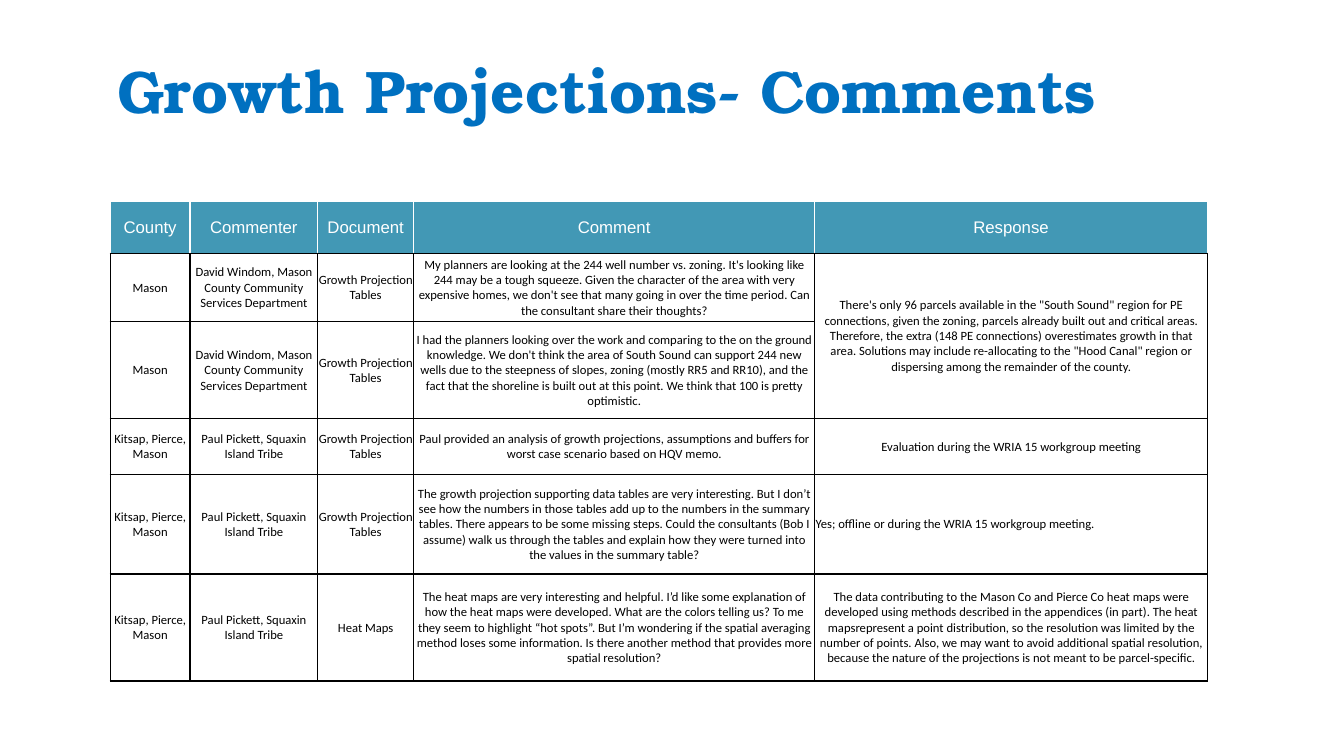
from typing import Any, NamedTuple

from pptx import Presentation
from pptx.dml.color import RGBColor
from pptx.enum.text import MSO_ANCHOR as Anchor, MSO_AUTO_SIZE as Fit, PP_ALIGN as Align
from pptx.oxml import parse_xml
from pptx.oxml.ns import nsdecls
from pptx.util import Pt

BLUE = RGBColor(0x00, 0x70, 0xC0)
TEAL = RGBColor(0x42, 0x98, 0xB5)
WHITE = RGBColor(0xFF, 0xFF, 0xFF)
BLACK = RGBColor(0x00, 0x00, 0x00)

WIDTHS = (56.9, 91.3, 68.5, 286.5, 280.6)
HEAD_HIGH = 36.7

TITLE_FONT = {"name": "TeX Gyre Bonum", "size": Pt(42.9), "bold": True}
HEAD_FONT = {"name": "Arial", "size": Pt(12), "bold": False}
BODY_FONT = {"name": "Calibri", "size": Pt(9), "bold": False}
CELL = {
    "margin_left": Pt(0.7),
    "margin_right": Pt(0.7),
    "margin_top": Pt(0.7),
    "margin_bottom": Pt(0),
    "vertical_anchor": Anchor.MIDDLE,
}


class Note(NamedTuple):
    high: float
    county: str
    person: str
    paper: str
    comment: str
    reply: str
    align: Align = Align.CENTER


HEADS = ("County", "Commenter", "Document", "Comment", "Response")
DAVID = "David Windom, Mason County Community Services Department"
PAUL = "Paul Pickett, Squaxin Island Tribe"
THREE = "Kitsap, Pierce, Mason"
TABLES = "Growth Projection Tables"

# An empty reply shares the cell above it.
NOTES = (
    Note(
        49, "Mason", DAVID, TABLES,
        "My planners are looking at the 244 well number vs. zoning. It's looking like "
        "244 may be a tough squeeze. Given the character of the area with very "
        "expensive homes, we don't see that many going in over the time period. Can "
        "the consultant share their thoughts?",
        "There's only 96 parcels available in the \"South Sound\" region for PE "
        "connections, given the zoning, parcels already built out and critical areas. "
        "Therefore, the extra (148 PE connections) overestimates growth in that area. "
        "Solutions may include re-allocating to the \"Hood Canal\" region or dispersing "
        "among the remainder of the county.",
    ),
    Note(
        69, "Mason", DAVID, TABLES,
        "I had the planners looking over the work and comparing to the on the ground "
        "knowledge. We don't think the area of South Sound can support 244 new "
        "wells due to the steepness of slopes, zoning (mostly RR5 and RR10), and the "
        "fact that the shoreline is built out at this point. We think that 100 is pretty "
        "optimistic.",
        "",
    ),
    Note(
        39.8, THREE, PAUL, TABLES,
        "Paul provided an analysis of growth projections, assumptions and buffers for "
        "worst case scenario based on HQV memo.",
        "Evaluation during the WRIA 15 workgroup meeting",
    ),
    Note(
        71.4, THREE, PAUL, TABLES,
        "The growth projection supporting data tables are very interesting. But I don’t "
        "see how the numbers in those tables add up to the numbers in the summary "
        "tables. There appears to be some missing steps. Could the consultants (Bob I "
        "assume) walk us through the tables and explain how they were turned into "
        "the values in the summary table?",
        "Yes; offline or during the WRIA 15 workgroup meeting.",
        Align.LEFT,
    ),
    Note(
        76.4, THREE, PAUL, "Heat Maps",
        "The heat maps are very interesting and helpful. I’d like some explanation of "
        "how the heat maps were developed. What are the colors telling us? To me "
        "they seem to highlight “hot spots”. But I’m wondering if the spatial averaging "
        "method loses some information. Is there another method that provides more "
        "spatial resolution?",
        "The data contributing to the Mason Co and Pierce Co heat maps were "
        "developed using methods described in the appendices (in part). The heat "
        "mapsrepresent a point distribution, so the resolution was limited by the "
        "number of points. Also, we may want to avoid additional spatial resolution, "
        "because the nature of the projections is not meant to be parcel-specific.",
    ),
)


def put(item: Any, look: dict[str, Any]) -> None:
    """Set each named attribute of the item."""
    for name, value in look.items():
        setattr(item, name, value)


def write(frame: Any, text: str, font: dict[str, Any], color: RGBColor,
          align: Align = Align.CENTER) -> None:
    line = frame.paragraphs[0]
    line.alignment = align
    run = line.add_run()
    run.text = text
    put(run.font, font)
    run.font.color.rgb = color


def edge(cell: Any, sides: dict[str, RGBColor]) -> None:
    """Draw the borders, which come before the fill in the cell's XML."""
    props = cell._tc.get_or_add_tcPr()
    for spot, (side, color) in enumerate(sides.items()):
        props.insert(spot, parse_xml(
            f'<a:ln{side} {nsdecls("a")} w="{Pt(1)}"><a:solidFill>'
            f'<a:srgbClr val="{color}"/></a:solidFill></a:ln{side}>'))


def add_title(slide: Any) -> None:
    title = slide.shapes.title
    put(title, {"left": Pt(19.4), "top": Pt(11.5), "width": Pt(828), "height": Pt(104.4)})
    frame = title.text_frame
    put(frame, {"auto_size": Fit.NONE, "word_wrap": True, "vertical_anchor": Anchor.MIDDLE})
    write(frame, "Growth Projections- Comments", TITLE_FONT, BLUE)


def add_grid(slide: Any) -> None:
    highs = (HEAD_HIGH, *(note.high for note in NOTES))
    grid = slide.shapes.add_table(
        len(highs), len(WIDTHS), Pt(78.8), Pt(144.2), Pt(sum(WIDTHS)), Pt(sum(highs))).table
    put(grid, {"first_row": False, "horz_banding": False})
    for column, width in zip(grid.columns, WIDTHS):
        column.width = Pt(width)
    for row, high in zip(grid.rows, highs):
        row.height = Pt(high)

    for col, head in enumerate(HEADS):
        cell = grid.cell(0, col)
        put(cell, CELL)
        cell.fill.solid()
        cell.fill.fore_color.rgb = TEAL
        edge(cell, {"L": WHITE, "R": WHITE, "T": WHITE, "B": BLACK})
        write(cell.text_frame, head, HEAD_FONT, WHITE)

    for row, note in enumerate(NOTES, 1):
        texts = (note.county, note.person, note.paper, note.comment, note.reply)
        for col, text in enumerate(texts):
            cell = grid.cell(row, col)
            put(cell, CELL)
            cell.fill.background()
            edge(cell, dict.fromkeys("LRTB", BLACK))
            if text:
                align = note.align if text is note.reply else Align.CENTER
                write(cell.text_frame, text, BODY_FONT, BLACK, align)
            else:
                grid.cell(row - 1, col).merge(cell)


def main() -> None:
    deck = Presentation()
    put(deck, {"slide_width": Pt(960), "slide_height": Pt(540)})
    slide = deck.slides.add_slide(deck.slide_layouts.get_by_name("Title Only"))
    add_title(slide)
    add_grid(slide)
    deck.save("out.pptx")


if __name__ == "__main__":
    main()
